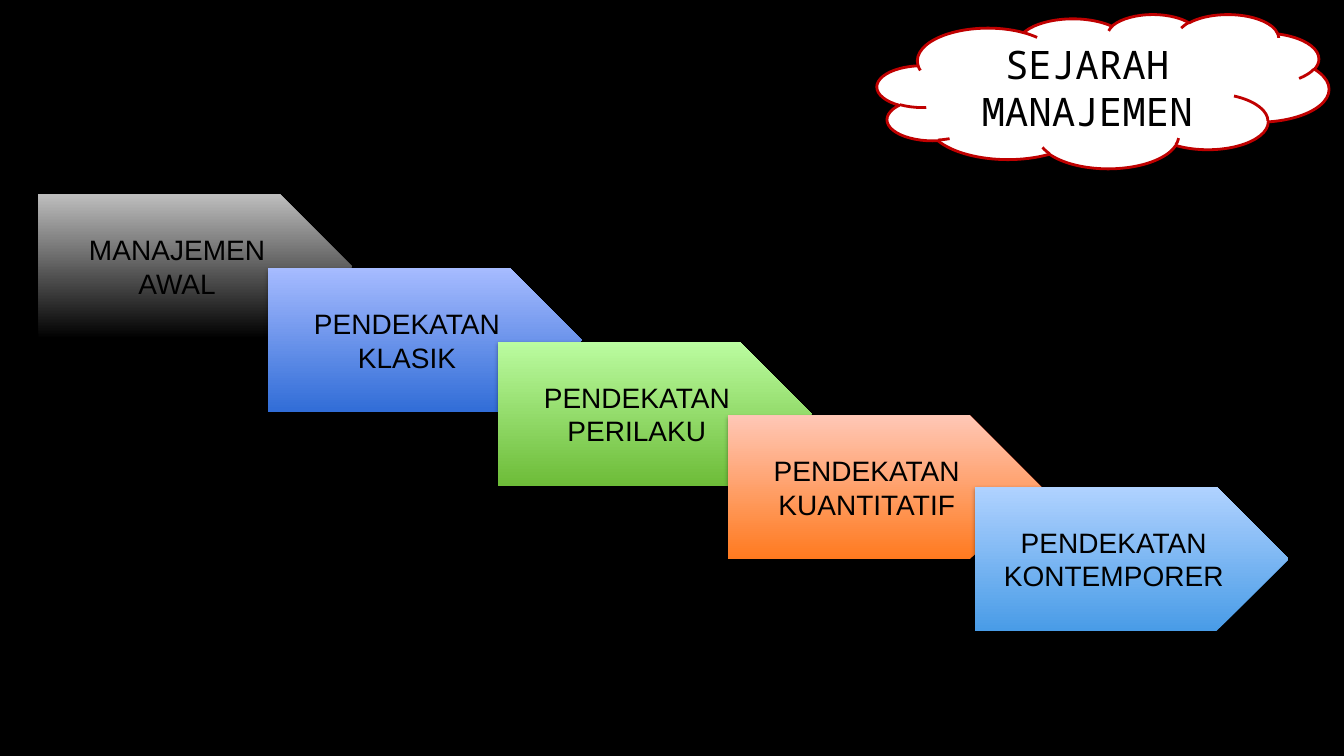
import pptx
import pptx.util
import pptx.dml.color
import pptx.enum.shapes
import pptx.enum.text
import lxml.etree
from dataclasses import dataclass
from pptx.oxml.ns import qn

Inches = pptx.util.Inches
Pt = pptx.util.Pt
MSO_SHAPE = pptx.enum.shapes.MSO_SHAPE


@dataclass(frozen=True)
class Theme:
    background: str = "000000"
    text: str = "000000"
    cloud_fill: str = "FFFFFF"
    cloud_line: str = "C00000"
    shadow: str = "000000"
    title_font: str = "Noto Sans Mono"
    stage_font: str = "Arial"
    title_size: int = 28
    stage_size: int = 20
    # Bottom and top colour of each stage
    gradients: tuple = (
        ("000000", "BDBDBD"),
        ("316DD7", "A6BBFF"),
        ("6DBC38", "BBFCA0"),
        ("FF7A1F", "FFC7B6"),
        ("499CE7", "B0D2FF"),
    )


THEME = Theme()
STAGES = (
    "MANAJEMEN AWAL",
    "PENDEKATAN KLASIK",
    "PENDEKATAN PERILAKU",
    "PENDEKATAN KUANTITATIF",
    "PENDEKATAN KONTEMPORER",
)


def rgb(value):
    return pptx.dml.color.RGBColor.from_string(value)


def write_centred(shape, text, font_name, size):
    frame = shape.text_frame
    frame.word_wrap = True
    frame.auto_size = pptx.enum.text.MSO_AUTO_SIZE.NONE
    frame.vertical_anchor = pptx.enum.text.MSO_ANCHOR.MIDDLE
    paragraph = frame.paragraphs[0]
    paragraph.alignment = pptx.enum.text.PP_ALIGN.CENTER
    run = paragraph.add_run()
    run.text = text
    run.font.name = font_name
    run.font.size = Pt(size)
    run.font.color.rgb = rgb(THEME.text)


def add_soft_shadow(shape):
    shape.shadow.inherit = False
    effects = shape._element.spPr.find(qn("a:effectLst"))
    shadow = lxml.etree.SubElement(
        effects, qn("a:outerShdw"), blurRad=str(Pt(3.1)), dist=str(Pt(1.8)),
        dir="5400000", rotWithShape="0")
    color = lxml.etree.SubElement(shadow, qn("a:srgbClr"), val=THEME.shadow)
    lxml.etree.SubElement(color, qn("a:alpha"), val="35000")


def add_title_cloud(slide, left, top, width, height):
    cloud = slide.shapes.add_shape(
        MSO_SHAPE.CLOUD, Inches(left), Inches(top), Inches(width), Inches(height))
    cloud.shadow.inherit = False
    cloud.fill.solid()
    cloud.fill.fore_color.rgb = rgb(THEME.cloud_fill)
    cloud.line.color.rgb = rgb(THEME.cloud_line)
    cloud.line.width = Pt(2)

    # The title sits in the clear middle of the cloud, above its outline
    title = slide.shapes.title
    title.left, title.top = Inches(left + 0.14 * width), Inches(top + 0.15 * height)
    title.width, title.height = Inches(0.65 * width), Inches(0.65 * height)
    write_centred(title, "SEJARAH MANAJEMEN", THEME.title_font, THEME.title_size)
    cloud._element.addnext(title._element)


def add_stage(slide, left, top, width, height, text, gradient):
    stage = slide.shapes.add_shape(
        MSO_SHAPE.PENTAGON, Inches(left), Inches(top), Inches(width), Inches(height))
    stage.fill.gradient()
    stage.fill.gradient_angle = 90
    for stop, color, position in zip(stage.fill.gradient_stops, gradient, (0, 1)):
        stop.color.rgb = rgb(color)
        stop.position = position
    stage.line.fill.background()
    add_soft_shadow(stage)
    write_centred(stage, text, THEME.stage_font, THEME.stage_size)


def add_staircase(slide, left, top, width, height):
    stage_width, stage_height = 3.11, 1.43
    step_x, step_y = 2.28, 0.73
    last = len(STAGES) - 1
    for index, (text, gradient) in enumerate(zip(STAGES, THEME.gradients)):
        x, y = left + index * step_x, top + index * step_y
        if index == last:  # The last stage ends at the corner of the box
            x, y = left + width - stage_width, top + height - stage_height
        add_stage(slide, x, y, stage_width, stage_height, text, gradient)


def main():
    presentation = pptx.Presentation()
    presentation.slide_width = Inches(13.33)
    presentation.slide_height = Inches(7.5)
    title_only = presentation.slide_layouts[5]
    slide = presentation.slides.add_slide(title_only)
    slide.background.fill.solid()
    slide.background.fill.fore_color.rgb = rgb(THEME.background)

    add_title_cloud(slide, 8.7, 0.14, 4.48, 1.53)
    add_staircase(slide, 0.38, 1.93, 12.4, 4.33)
    presentation.save("out.pptx")


if __name__ == "__main__":
    main()
